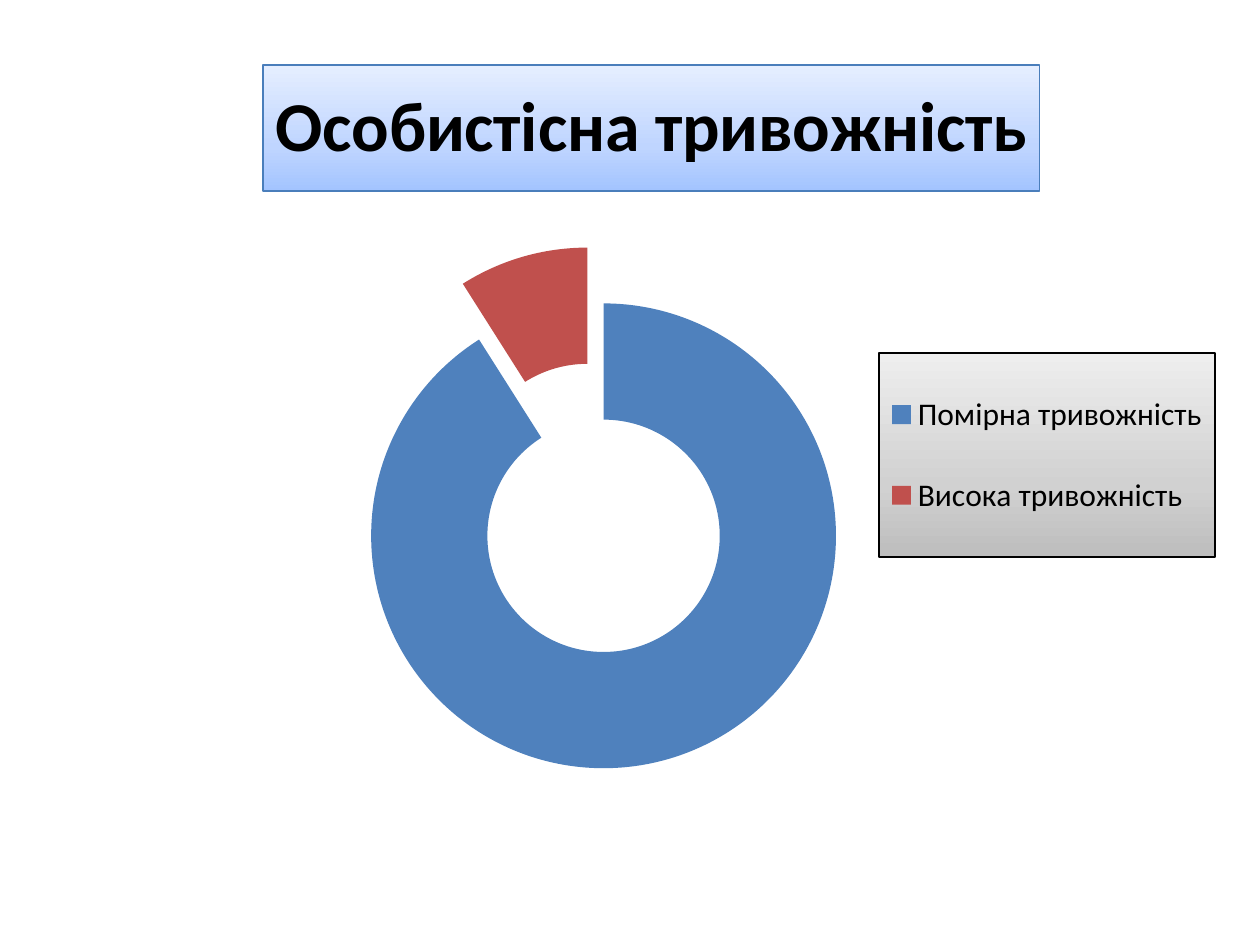
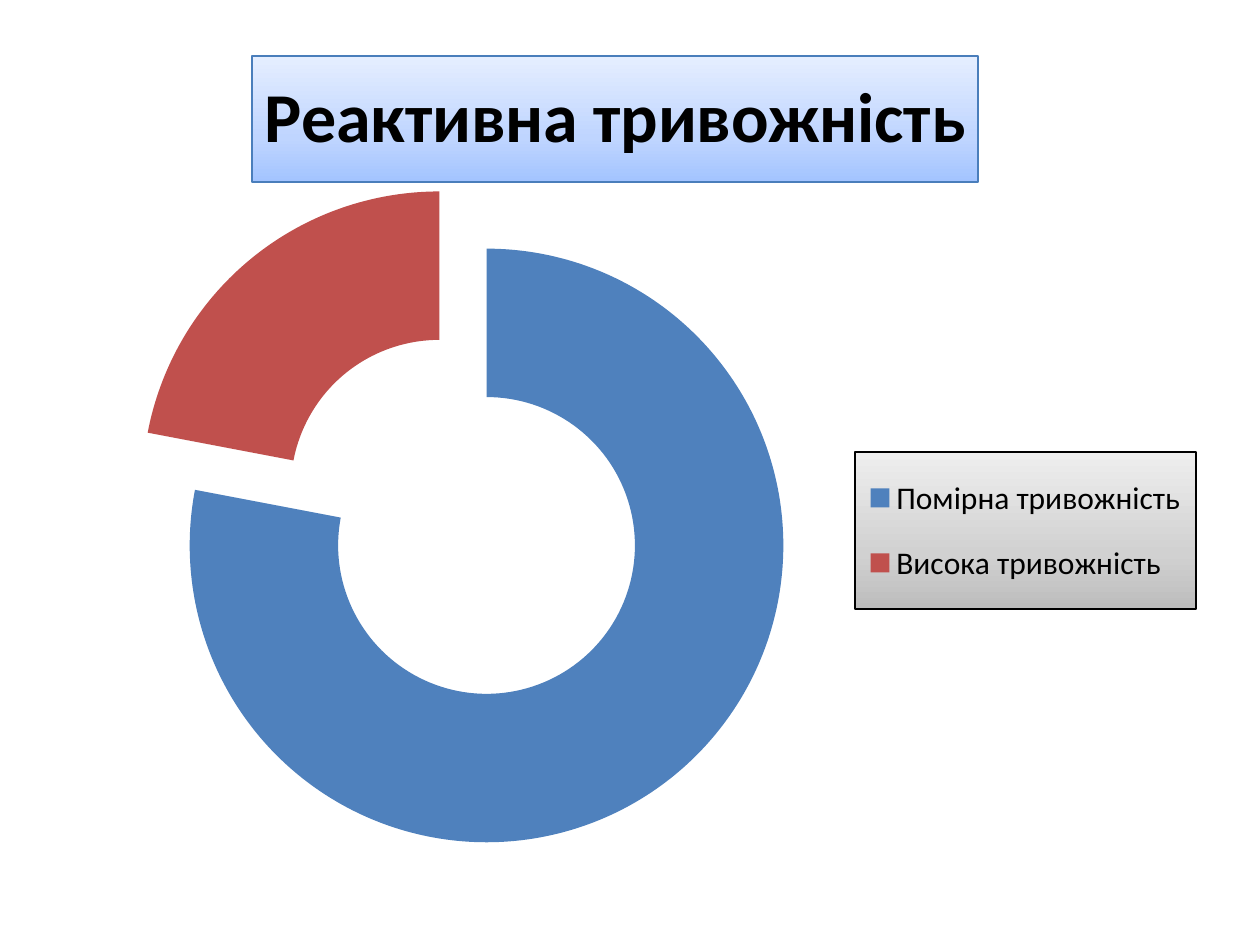
from dataclasses import dataclass
from typing import NamedTuple

from lxml import etree
from pptx import Presentation
from pptx import util as u
from pptx.chart import data as cd
from pptx.dml.color import RGBColor
from pptx.enum import chart as ec
from pptx.oxml import parse_xml
from pptx.oxml.ns import nsdecls, qn

PX = 914400 / 126
FONT = "Calibri"
BLACK = RGBColor(0, 0, 0)
BLUE = RGBColor(0x4F, 0x81, 0xBD)
RED = RGBColor(0xC0, 0x50, 0x4D)
EDGE = RGBColor(0x4A, 0x7E, 0xBB)
LEVELS = {"Помірна тривожність": BLUE, "Висока тривожність": RED}


class Box(NamedTuple):
    left: int
    top: int
    width: int
    height: int


class Skin(NamedTuple):
    low: RGBColor
    mid: RGBColor
    high: RGBColor
    edge: RGBColor


SKY = Skin(RGBColor(0xA3, 0xC4, 0xFF), RGBColor(0xBF, 0xD5, 0xFF), RGBColor(0xE5, 0xEE, 0xFF), EDGE)
GREY = Skin(RGBColor(0xBD, 0xBD, 0xBD), RGBColor(0xD1, 0xD1, 0xD1), RGBColor(0xEE, 0xEE, 0xEE), BLACK)


@dataclass
class Ring:
    title: str
    series: str
    shares: tuple[int, int]
    frame: Box
    head: Box
    plot: Box
    key: Box


RINGS = [
    Ring("Особистісна тривожність", "Особистісна тривожність", (91, 9),
         Box(84, 55, 1134, 799), Box(263, 65, 777, 125),
         Box(334, 173, 523, 670), Box(879, 353, 336, 204)),
    Ring("Реактивна тривожність", "Series 1", (78, 22),
         Box(35, 45, 1173, 808), Box(252, 56, 709, 97),
         Box(117, 183, 692, 668), Box(855, 452, 341, 157)),
]


def px(size: int) -> u.Emu:
    return u.Emu(round(size * PX))


def layout(box: Box, frame: Box, inner: bool = False) -> etree.ElementBase:
    parts = {
        "x": (box.left - frame.left) / frame.width,
        "y": (box.top - frame.top) / frame.height,
        "w": box.width / frame.width,
        "h": box.height / frame.height,
    }
    target = '<c:layoutTarget val="inner"/>' if inner else ""
    modes = "".join(f'<c:{axis}Mode val="edge"/>' for axis in "xy")
    sizes = "".join(f'<c:{name} val="{part:.4f}"/>' for name, part in parts.items())
    return parse_xml(f'<c:layout {nsdecls("c")}><c:manualLayout>'
                     f'{target}{modes}{sizes}</c:manualLayout></c:layout>')


def clear(node: etree.ElementBase) -> None:
    for old in node.findall(qn("c:layout")):
        node.remove(old)


def dress(node: etree.ElementBase, box: Box, frame: Box, skin: Skin) -> None:
    clear(node)
    stops = "".join(
        f'<a:gs pos="{spot * 1000}"><a:srgbClr val="{tint}"/></a:gs>'
        for spot, tint in zip((0, 35, 100), skin))
    over = node.find(qn("c:overlay"))
    over.addprevious(layout(box, frame))
    over.addnext(parse_xml(
        f'<c:spPr {nsdecls("c", "a")}><a:gradFill><a:gsLst>{stops}</a:gsLst>'
        f'<a:lin ang="16200000" scaled="1"/></a:gradFill><a:ln w="9525">'
        f'<a:solidFill><a:srgbClr val="{skin.edge}"/></a:solidFill></a:ln></c:spPr>'))


def style(font, size: int, bold: bool) -> None:
    font.name = FONT
    font.size = u.Pt(size)
    font.bold = bold
    font.color.rgb = BLACK


def draw(slide, ring: Ring) -> None:
    data = cd.CategoryChartData()
    data.categories = list(LEVELS)
    data.add_series(ring.series, ring.shares)
    chart = slide.shapes.add_chart(
        ec.XL_CHART_TYPE.DOUGHNUT_EXPLODED, *map(px, ring.frame), data).chart
    style(chart.font, 18, False)

    chart.has_title = True
    title = chart.chart_title
    run = title.text_frame.paragraphs[0].add_run()
    run.text = ring.title
    style(run.font, 40, True)
    dress(title._element, ring.head, ring.frame, SKY)

    chart.has_legend = True
    key = chart.legend
    key.position = ec.XL_LEGEND_POSITION.RIGHT
    key.include_in_layout = False
    style(key.font, 18, False)
    dress(key._element, ring.key, ring.frame, GREY)

    area = chart._chartSpace.chart.plotArea
    clear(area)
    area.insert(0, layout(ring.plot, ring.frame, True))

    plot = chart.plots[0]
    plot.vary_by_categories = True
    for spot, tint in enumerate(LEVELS.values()):
        fill = plot.series[0].points[spot].format.fill
        fill.solid()
        fill.fore_color.rgb = tint


def main() -> None:
    deck = Presentation()
    deck.slide_width, deck.slide_height = px(1260), px(945)
    for ring in RINGS:
        draw(deck.slides.add_slide(deck.slide_layouts[6]), ring)
    deck.save("out.pptx")


if __name__ == "__main__":
    main()
